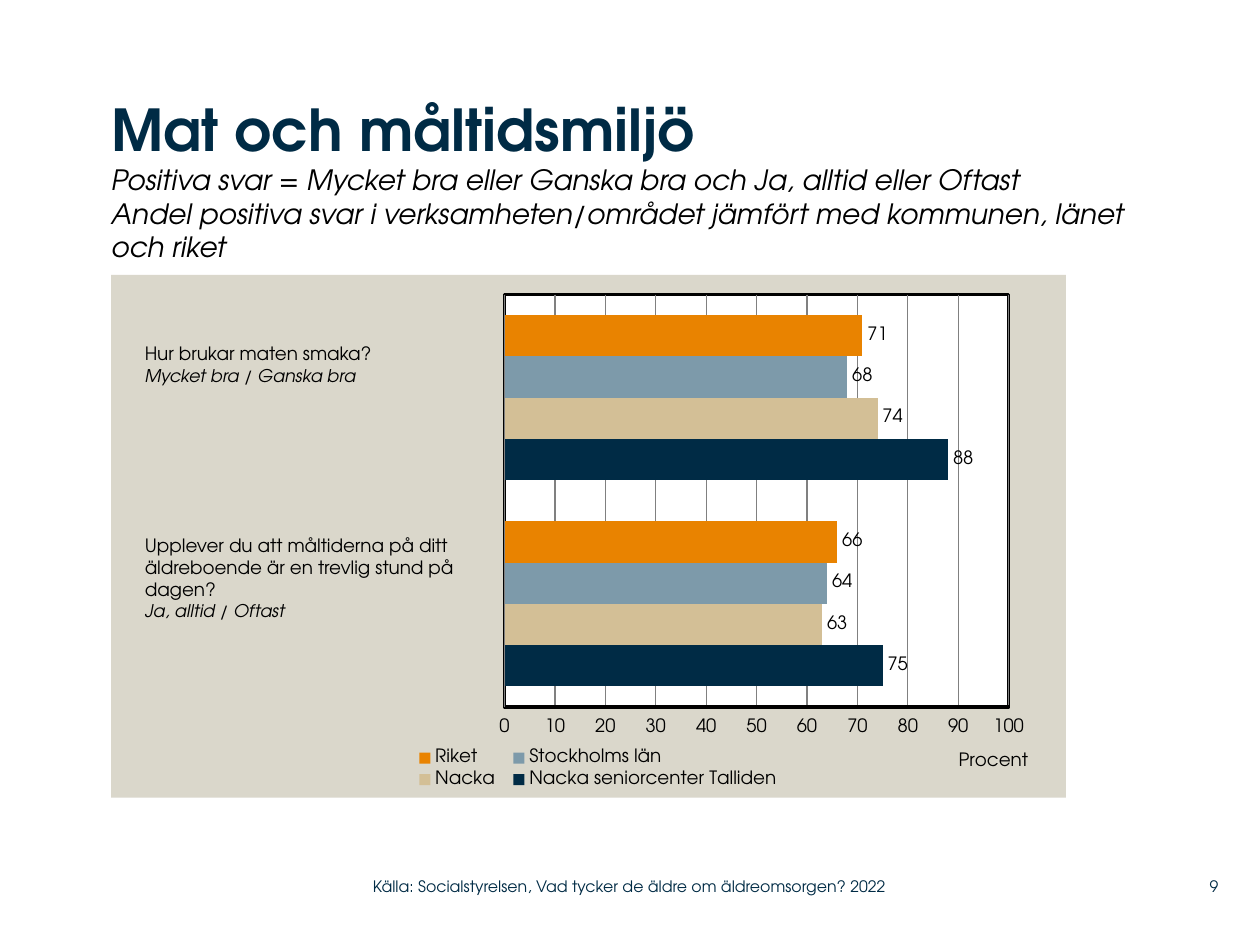
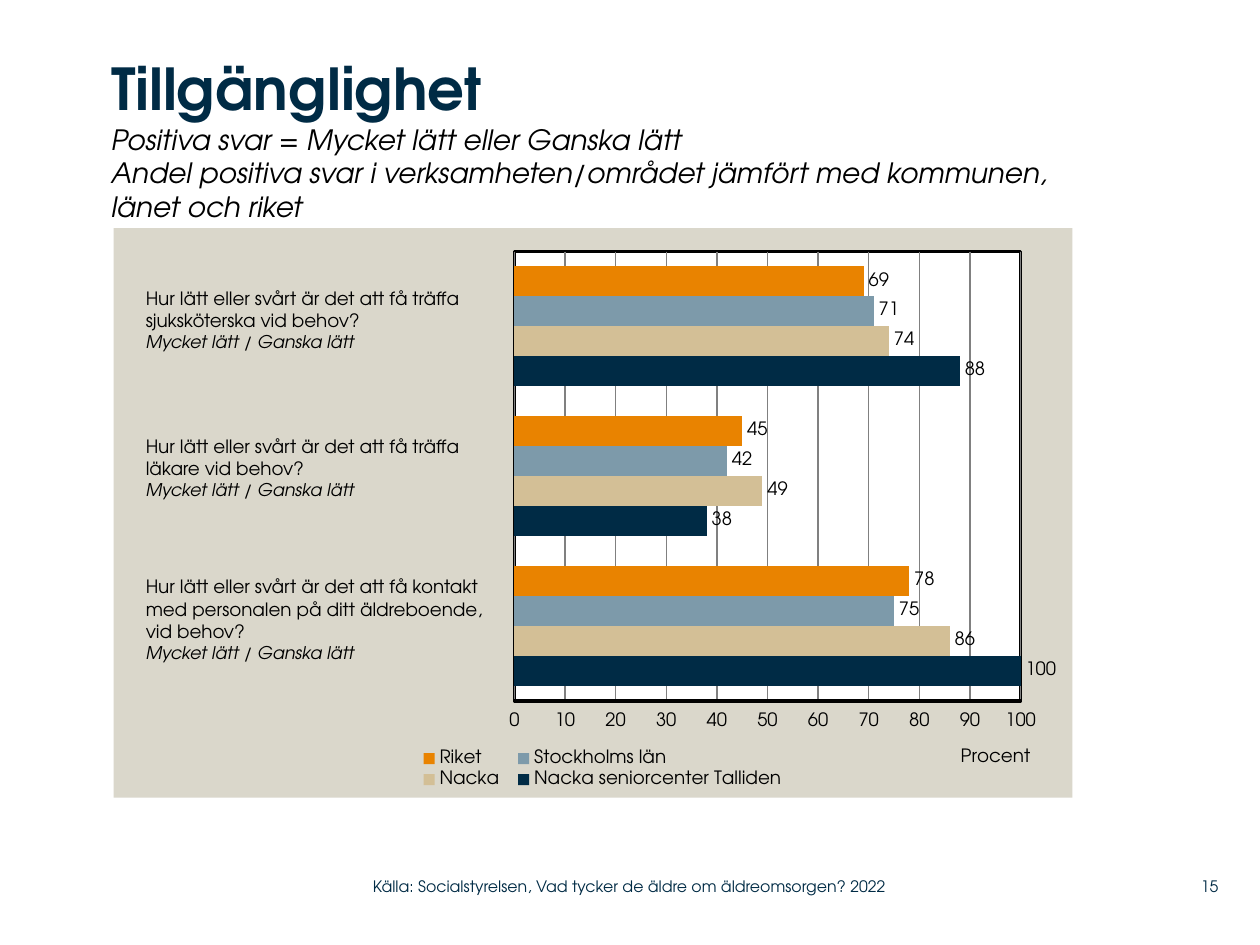
from copy import deepcopy

from lxml import etree
from pptx import Presentation
from pptx.chart.data import CategoryChartData
from pptx.dml.color import RGBColor
from pptx.enum.chart import XL_CHART_TYPE, XL_LABEL_POSITION, XL_LEGEND_POSITION, XL_TICK_LABEL_POSITION, XL_TICK_MARK
from pptx.enum.text import MSO_ANCHOR, MSO_AUTO_SIZE, PP_ALIGN
from pptx.oxml import parse_xml
from pptx.oxml.ns import qn
from pptx.util import Cm, Pt

FONT = "TeX Gyre Adventor"
NAVY, BLACK, WHITE, GREY, SAND = "002B45", "000000", "FFFFFF", "808080", "DAD7CB"
SOURCE = "Källa: Socialstyrelsen, Vad tycker de äldre om äldreomsorgen? 2022"
COMPARISON = "Andel positiva svar i verksamheten/området jämfört med kommunen, länet och riket"
SERIES_COLORS = {
    "Nacka seniorcenter Talliden": NAVY,
    "Nacka": "D3BF96",
    "Stockholms län": "7D9AAA",
    "Riket": "E98300",
}
NAMESPACES = (
    'xmlns:c="http://schemas.openxmlformats.org/drawingml/2006/chart" '
    'xmlns:a="http://schemas.openxmlformats.org/drawingml/2006/main"'
)

SLIDES = [
    {
        "title": "Mat och måltidsmiljö",
        "scale": "Positiva svar = Mycket bra eller Ganska bra och Ja, alltid eller Oftast",
        "title_box": (2.24, 1.88, 21.39, 3.66),
        "chart_box": (2.24, 5.54, 19.25, 10.54),
        "plot": (0.412, 0.038, 0.528, 0.789),
        "legend": (0.31, 0.9, 0.4, 0.09),
        "axis_title": (0.884, 0.905),
        "values": [(75, 88), (63, 74), (64, 68), (66, 71)],
        "questions": [
            ((2.67, 6.78, 7.04, 1.6), ["Hur brukar maten smaka?"], "Mycket bra / Ganska bra"),
            (
                (2.67, 10.64, 7.04, 2.49),
                ["Upplever du att måltiderna på ditt äldreboende är en trevlig stund på", "dagen?"],
                "Ja, alltid / Oftast",
            ),
        ],
        "number": "9",
    },
    {
        "title": "Tillgänglighet",
        "scale": "Positiva svar = Mycket lätt eller Ganska lätt",
        "title_box": (2.24, 1.07, 19.74, 3.53),
        "chart_box": (2.29, 4.6, 19.33, 11.48),
        "plot": (0.418, 0.041, 0.528, 0.789),
        "legend": (0.31, 0.91, 0.4, 0.08),
        "axis_title": (0.88, 0.905),
        "values": [(100, 38, 88), (86, 49, 74), (75, 42, 71), (78, 45, 69)],
        "questions": [
            (
                (2.69, 5.66, 7.59, 2.06),
                ["Hur lätt eller svårt är det att få träffa sjuksköterska vid behov?"],
                "Mycket lätt / Ganska lätt",
            ),
            (
                (2.69, 8.64, 7.44, 2.06),
                ["Hur lätt eller svårt är det att få träffa", "läkare vid behov?"],
                "Mycket lätt / Ganska lätt",
            ),
            (
                (2.69, 11.48, 7.65, 2.49),
                ["Hur lätt eller svårt är det att få kontakt", "med personalen på ditt äldreboende,", "vid behov?"],
                "Mycket lätt / Ganska lätt",
            ),
        ],
        "number": "15",
    },
]


def set_color(color_format, color):
    color_format.rgb = RGBColor.from_string(color)


def add_run(paragraph, text, size=10.5, color=BLACK, bold=False, italic=False, line_break=False):
    run = paragraph.add_run()
    run.text = text
    run.font.name = FONT
    run.font.size = Pt(size)
    run.font.bold = bold
    run.font.italic = italic
    set_color(run.font.color, color)
    if line_break:
        paragraph.add_line_break()
        paragraph._p.findall(qn("a:br"))[-1].append(deepcopy(run._r.rPr))


presentation = Presentation()
presentation.slide_width = Cm(25.4)
presentation.slide_height = Cm(19.05)

for content in SLIDES:
    slide = presentation.slides.add_slide(presentation.slide_layouts[5])

    title = slide.shapes.title
    title.left, title.top, title.width, title.height = map(Cm, content["title_box"])
    frame = title.text_frame
    frame.margin_left = frame.margin_top = frame.margin_right = frame.margin_bottom = 0
    frame.vertical_anchor = MSO_ANCHOR.TOP
    frame.auto_size = MSO_AUTO_SIZE.NONE
    frame.word_wrap = True
    paragraph = frame.paragraphs[0]
    paragraph.alignment = PP_ALIGN.LEFT
    add_run(paragraph, content["title"], size=33, color=NAVY, bold=True, line_break=True)
    add_run(paragraph, content["scale"], size=16, italic=True, line_break=True)
    add_run(paragraph, COMPARISON, size=16, italic=True)

    chart_data = CategoryChartData()
    chart_data.categories = [str(n + 1) for n in range(len(content["questions"]))]
    for name, values in zip(SERIES_COLORS, content["values"]):
        chart_data.add_series(name, values)
    chart = slide.shapes.add_chart(
        XL_CHART_TYPE.BAR_CLUSTERED, *map(Cm, content["chart_box"]), chart_data
    ).chart
    chart.has_title = False
    chart.font.name = FONT
    chart.font.size = Pt(10.5)
    set_color(chart.font.color, BLACK)

    plot = chart.plots[0]
    plot.gap_width = 100
    plot.vary_by_categories = False
    for series, color in zip(plot.series, SERIES_COLORS.values()):
        series.format.fill.solid()
        set_color(series.format.fill.fore_color, color)
        labels = series.data_labels
        labels.show_value = True
        labels.position = XL_LABEL_POSITION.OUTSIDE_END
        labels.font.name = FONT
        labels.font.size = Pt(10.5)

    chart.category_axis.visible = False
    axis = chart.value_axis
    axis.minimum_scale, axis.maximum_scale, axis.major_unit = 0, 100, 10
    axis.major_tick_mark = XL_TICK_MARK.NONE
    axis.tick_label_position = XL_TICK_LABEL_POSITION.LOW
    axis.tick_labels.font.name = FONT
    axis.tick_labels.font.size = Pt(10.5)
    axis.format.line.width = Pt(2)
    set_color(axis.format.line.color, BLACK)
    axis.has_major_gridlines = True
    axis.major_gridlines.format.line.width = Pt(0.75)
    set_color(axis.major_gridlines.format.line.color, GREY)
    add_run(axis.axis_title.text_frame.paragraphs[0], "Procent")

    chart.has_legend = True
    chart.legend.position = XL_LEGEND_POSITION.BOTTOM
    chart.legend.include_in_layout = False
    chart.legend.font.name = FONT
    chart.legend.font.size = Pt(10.5)

    chart_space = chart._chartSpace
    plot_area = chart_space.chart.plotArea
    for element, index, bounds in (
        (plot_area, 0, content["plot"]),
        (chart.legend._element, 1, content["legend"]),
        (axis.axis_title._element, 1, content["axis_title"]),
    ):
        for old_layout in element.findall(qn("c:layout")):
            element.remove(old_layout)
        layout = parse_xml(f"<c:layout {NAMESPACES}><c:manualLayout/></c:layout>")
        settings = [("xMode", "edge"), ("yMode", "edge"), *zip("xywh", bounds)]
        if element is plot_area:
            settings.insert(0, ("layoutTarget", "inner"))
        for tag, value in settings:
            etree.SubElement(layout[0], qn(f"c:{tag}")).set("val", str(value))
        element.insert(index, layout)

    for last_part, fill, line in (
        (chart_space.chart, SAND, "<a:ln><a:noFill/></a:ln>"),
        (
            plot_area[-1],
            WHITE,
            f'<a:ln w="{Pt(2)}"><a:solidFill><a:srgbClr val="{BLACK}"/></a:solidFill></a:ln>',
        ),
    ):
        last_part.addnext(parse_xml(
            f'<c:spPr {NAMESPACES}><a:solidFill><a:srgbClr val="{fill}"/></a:solidFill>{line}</c:spPr>'
        ))

    for box, lines, answers in content["questions"]:
        frame = slide.shapes.add_textbox(*map(Cm, box)).text_frame
        frame.word_wrap = True
        frame.auto_size = MSO_AUTO_SIZE.SHAPE_TO_FIT_TEXT
        add_run(frame.paragraphs[0], lines[0])
        for line in lines[1:]:
            add_run(frame.add_paragraph(), line)
        add_run(frame.add_paragraph(), answers, size=10, italic=True)

    for left, width, text, alignment in (
        (7.52, 11.25, SOURCE, PP_ALIGN.LEFT),
        (23.37, 1.19, content["number"], PP_ALIGN.RIGHT),
    ):
        frame = slide.shapes.add_textbox(Cm(left), Cm(17.5), Cm(width), Cm(0.74)).text_frame
        frame.margin_left = frame.margin_top = frame.margin_right = frame.margin_bottom = 0
        frame.vertical_anchor = MSO_ANCHOR.MIDDLE
        frame.word_wrap = True
        frame.paragraphs[0].alignment = alignment
        add_run(frame.paragraphs[0], text, size=9, color=NAVY)

presentation.save("out.pptx")
